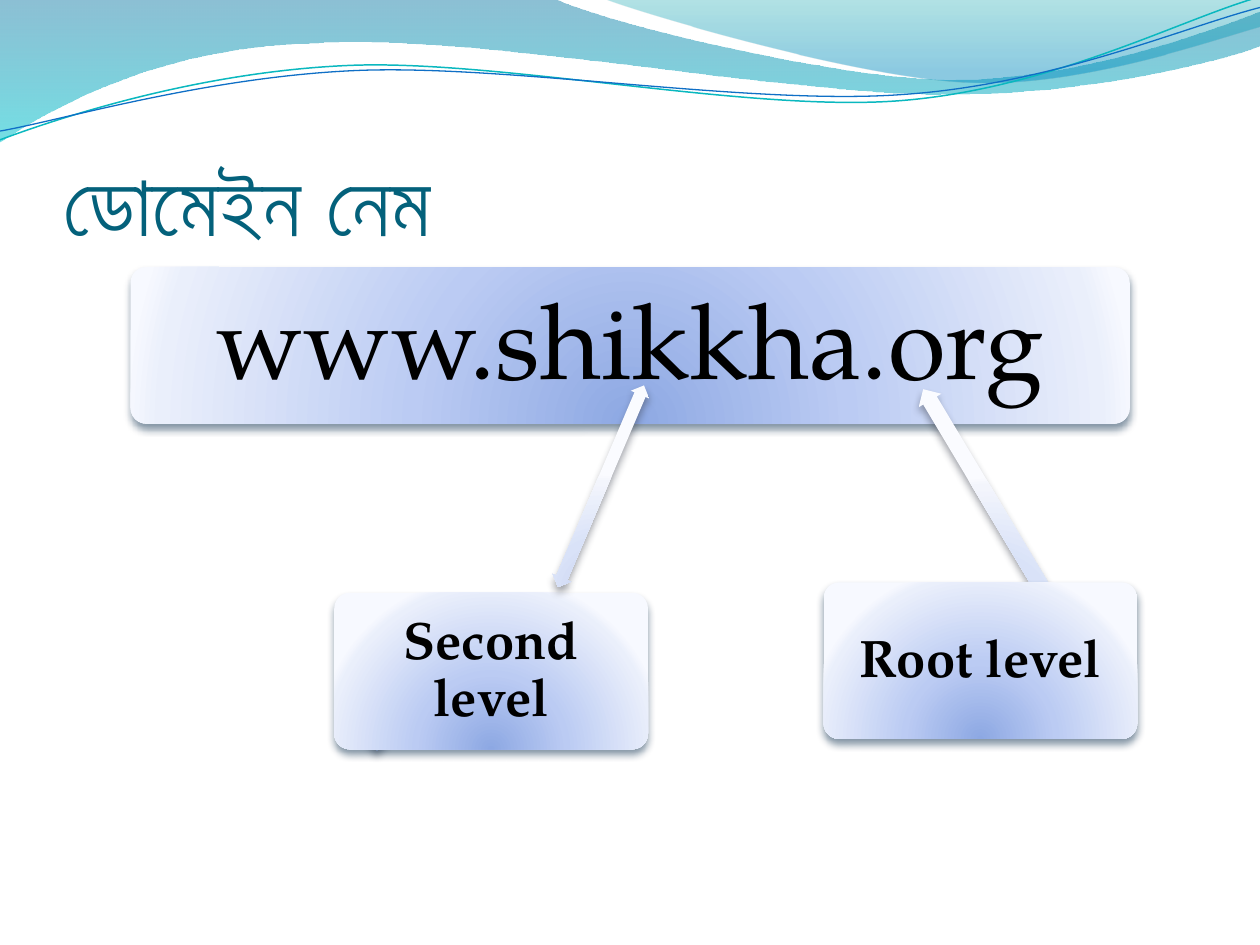
from itertools import chain
from math import cos, radians, sin

from lxml import etree
from pptx import Presentation
from pptx.dml.color import RGBColor
from pptx.enum.shapes import MSO_SHAPE
from pptx.enum.text import MSO_ANCHOR, PP_ALIGN
from pptx.oxml.ns import qn
from pptx.util import Pt

ROUNDED = MSO_SHAPE.ROUNDED_RECTANGLE
DOUBLE_ARROW = MSO_SHAPE.LEFT_RIGHT_ARROW
MIDDLE, BOTTOM = MSO_ANCHOR.MIDDLE, MSO_ANCHOR.BOTTOM
CENTER, LEFT = PP_ALIGN.CENTER, PP_ALIGN.LEFT

TITLE_COLOR = RGBColor(0x04, 0x61, 0x7B)
BLACK = RGBColor(0x00, 0x00, 0x00)
TEAL_LINE = RGBColor(0x0A, 0xB8, 0xBF)
BLUE_LINE = RGBColor(0x0F, 0x6F, 0xC6)
BOX_SHADOW = RGBColor(0x04, 0x27, 0x47)
ARROW_SHADOW = RGBColor(0x3C, 0x41, 0x4F)

# Gradient stops: position %, colour, opacity %
BOX_STOPS = [
    (0, RGBColor(0x8D, 0xA8, 0xE3), 100),
    (43, RGBColor(0xBB, 0xCB, 0xF3), 100),
    (93, RGBColor(0xEA, 0xEF, 0xFB), 100),
    (100, RGBColor(0xF7, 0xF9, 0xFF), 100),
]
ARROW_STOPS = [
    (0, RGBColor(0xC5, 0xD0, 0xEE), 100),
    (43, RGBColor(0xD9, 0xE2, 0xF8), 100),
    (93, RGBColor(0xF3, 0xF5, 0xFC), 100),
    (100, RGBColor(0xFA, 0xFB, 0xFF), 100),
]
WIDE_WAVE_STOPS = [(0, RGBColor(0x00, 0x74, 0xA1), 45), (100, RGBColor(0x00, 0xC6, 0xCF), 55)]
RIGHT_WAVE_STOPS = [(0, RGBColor(0x00, 0xA1, 0xA9), 30), (80, RGBColor(0x00, 0x8B, 0xBF), 45)]

# Outlines in points: a start, then segments of one point (line) or three (Bezier curve)
WIDE_WAVE = [
    [(0, 0)],
    [(316.8, -0.7)],
    [(342.7, 12.2), (478.1, 45.4), (545.8, 45.4)],
    [(614.2, 45.4), (689.8, 18.7), (720, 6.5)],
    [(720.7, 25.9)],
    [(707.8, 31.7), (626.4, 54.7), (537.1, 54)],
    [(447.8, 54), (275, 20.2), (185, 24.5)],
    [(92.9, 25.9), (33.1, 59.8), (-0.7, 81.4)],
    [(0, 0)],
]
RIGHT_WAVE = [
    [(344.9, -0.7)],
    [(366.5, 7.9), (491, 44.6), (553.7, 46.8)],
    [(616.3, 49.7), (691.9, 23), (720, 15.1)],
    [(720, 0)],
    [(344.9, -0.7)],
]
TEAL_WAVE = [
    [(0, 79.9)],
    [(34.6, 67), (113.8, 41), (199.4, 37.4)],
    [(284.4, 33.8), (427, 64.1), (513.4, 57.6)],
    [(599.8, 51.1), (675.4, 10.8), (718.6, -1.4)],
]
BLUE_WAVE = [
    [(0, 74.9)],
    [(33.8, 69.1), (118.1, 43.9), (203.8, 40.3)],
    [(290.2, 36.7), (429.8, 60.5), (516.2, 54)],
    [(601.9, 48.2), (677.5, 15.1), (720, 4.3)],
]
LINE_TILT = 2.7


def add_color(parent, color, opacity):
    node = etree.SubElement(parent, qn("a:srgbClr"), val=str(color))
    if opacity < 100:
        etree.SubElement(node, qn("a:alpha"), val=str(opacity * 1000))


def set_gradient(shape, stops, radial):
    """Fill from top to bottom, or radially from below the bottom edge."""
    shape.fill.background()
    properties = shape.element.spPr
    gradient = etree.Element(qn("a:gradFill"), rotWithShape="1")
    stop_list = etree.SubElement(gradient, qn("a:gsLst"))
    for position, color, opacity in stops:
        stop = etree.SubElement(stop_list, qn("a:gs"), pos=str(position * 1000))
        add_color(stop, color, opacity)
    if radial:
        path = etree.SubElement(gradient, qn("a:path"), path="circle")
        etree.SubElement(path, qn("a:fillToRect"), l="50000", t="130000", r="50000", b="-30000")
    else:
        etree.SubElement(gradient, qn("a:lin"), ang="5400000", scaled="1")
    properties.replace(properties.find(qn("a:noFill")), gradient)


def set_shadow(shape, color):
    shape.shadow.inherit = False
    effects = shape.element.spPr.find(qn("a:effectLst"))
    shadow = etree.SubElement(effects, qn("a:outerShdw"), blurRad=str(Pt(4.5)),
                              dist=str(Pt(3)), dir="5400000", rotWithShape="0")
    add_color(shadow, color, 48)


def turn(outline, center, degrees):
    """Turn an outline clockwise about a center."""
    cx, cy = center
    c, s = cos(radians(degrees)), sin(radians(degrees))
    return [[(cx + (x - cx) * c - (y - cy) * s, cy + (x - cx) * s + (y - cy) * c)
             for x, y in segment] for segment in outline]


def add_wave(page, outline, close):
    """Draw the points as a freeform, then join each three of a curve into one Bezier."""
    start, *points = [(Pt(x), Pt(y)) for x, y in chain.from_iterable(outline)]
    builder = page.shapes.build_freeform(*start)
    builder.add_line_segments(points, close=close)
    wave = builder.convert_to_shape()
    wave.shadow.inherit = False
    lines = wave.element.spPr.findall(".//" + qn("a:lnTo"))
    for segment in outline[1:]:
        steps, lines = lines[:len(segment)], lines[len(segment):]
        if len(segment) == 3:
            curve = etree.Element(qn("a:cubicBezTo"))
            steps[0].addprevious(curve)
            for step in steps:
                curve.append(step[0])
                step.getparent().remove(step)
    return wave


def add_waves(page):
    for outline, stops in ((WIDE_WAVE, WIDE_WAVE_STOPS), (RIGHT_WAVE, RIGHT_WAVE_STOPS)):
        wave = add_wave(page, outline, True)
        set_gradient(wave, stops, False)
        wave.line.fill.background()
    for outline, center, color, width in ((TEAL_WAVE, (359.3, 41.4), TEAL_LINE, 0.85),
                                          (BLUE_WAVE, (359.6, 42.5), BLUE_LINE, 0.75)):
        wave = add_wave(page, turn(outline, center, LINE_TILT), False)
        wave.rotation = -LINE_TILT
        wave.fill.background()
        wave.line.color.rgb = color
        wave.line.width = Pt(width)


def add_text(page, box, text, font, size, color, bold, align, anchor, margins):
    frame = page.shapes.add_textbox(*map(Pt, box)).text_frame
    frame.text = text
    frame.word_wrap = True
    frame.vertical_anchor = anchor
    (frame.margin_left, frame.margin_top,
     frame.margin_right, frame.margin_bottom) = map(Pt, margins)
    para = frame.paragraphs[0]
    para.alignment = align
    span = para.runs[0].font
    span.name, span.size, span.bold = font, Pt(size), bold
    span.color.rgb = color
    return para


def add_title(page, box, text):
    add_text(page, box, text, "Calibri", 50, TITLE_COLOR, True, LEFT, BOTTOM, (0, 3.6, 0, 0))


def add_glossy_shape(page, kind, box, stops, shadow):
    shape = page.shapes.add_shape(kind, *map(Pt, box))
    set_gradient(shape, stops, True)
    shape.line.fill.background()
    set_shadow(shape, shadow)
    return shape


def add_label(page, box, text, size, bold, margin):
    label = add_glossy_shape(page, ROUNDED, box, BOX_STOPS, BOX_SHADOW)
    label.adjustments[0] = 0.1
    left, top, width, height = box
    inner = (left + 2.6, top + 2.6, width - 5.2, height - 5.2)
    para = add_text(page, inner, text, "TeX Gyre Pagella", size, BLACK, bold,
                    CENTER, MIDDLE, [margin] * 4)
    para.line_spacing = 0.9


def add_arrow(page, box, rotation):
    arrow = add_glossy_shape(page, DOUBLE_ARROW, box, ARROW_STOPS, ARROW_SHADOW)
    arrow.adjustments[0], arrow.adjustments[1] = 0.6, 0.5
    arrow.rotation = rotation


def add_domain_diagram(page, box):
    left, top, width, height = box
    part_width, part_height = 179.3, 89.5
    add_label(page, (left, top, width, part_height), "www.shikkha.org", 60, False, 18)
    add_arrow(page, (left + 417.2, top + 125.3, 146.9, 15.1), 59.1)
    add_label(page, (left + 396, top + 180.2, part_width, part_height), "Root level", 30, True, 8.9)
    add_arrow(page, (left + 134.9, top + 262.1, 12.2, 14.4), 181.2)
    add_label(page, (left + 116.4, top + height - part_height, part_width, part_height),
              "Second level", 30, True, 8.9)
    add_arrow(page, (left + 206.2, top + 119.5, 125.3, 11.5), 293.1)


def main():
    deck = Presentation()
    deck.slide_width, deck.slide_height = Pt(720), Pt(540)
    page = deck.slides.add_slide(deck.slide_layouts[6])
    add_waves(page)
    add_title(page, (36.3, 55.4, 648, 90), "ডোমেইন নেম")
    add_domain_diagram(page, (74.6, 152.6, 571, 275.6))
    deck.save("out.pptx")


if __name__ == "__main__":
    main()
